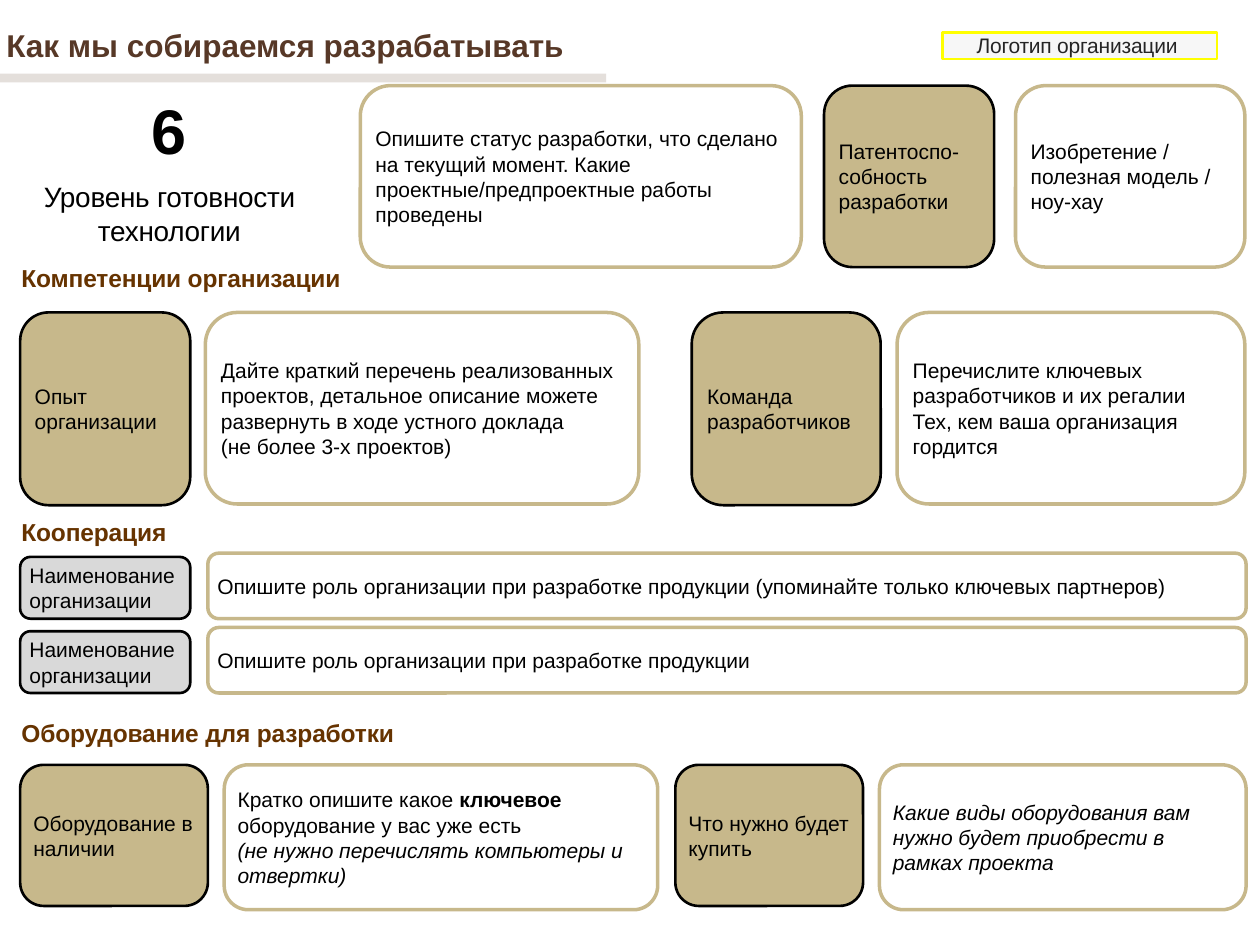
"""Build the slide on how the technology will be developed."""
from lxml.etree import SubElement
from pptx import Presentation
from pptx.dml.color import RGBColor
from pptx.enum.shapes import MSO_CONNECTOR, MSO_SHAPE
from pptx.enum.text import MSO_ANCHOR, PP_ALIGN
from pptx.oxml.ns import qn
from pptx.util import Inches, Pt

BLACK = RGBColor(0x00, 0x00, 0x00)
WHITE = RGBColor(0xFF, 0xFF, 0xFF)
SAND = RGBColor(0xC7, 0xB8, 0x8B)
GREY = RGBColor(0xD9, 0xD9, 0xD9)
PALE = RGBColor(0xF1, 0xF1, 0xF1)
YELLOW = RGBColor(0xFF, 0xFF, 0x00)
BROWN = RGBColor(0x66, 0x33, 0x00)
COCOA = RGBColor(0x57, 0x38, 0x27)
STONE = RGBColor(0xA8, 0x99, 0x8C)
INK = RGBColor(0x25, 0x25, 0x25)

deck = Presentation()
deck.slide_width, deck.slide_height = Inches(10), Inches(7.5)
slide = deck.slides.add_slide(deck.slide_layouts[6])
COL, ROW = deck.slide_width / 100, deck.slide_height / 75


def place(left, top, width, height, form=None):
    area = int(left * COL), int(top * ROW), int(width * COL), int(height * ROW)
    if form is None:
        return slide.shapes.add_textbox(*area)
    shape = slide.shapes.add_shape(form, *area)
    shape.shadow.inherit = False
    return shape


def write(shape, paras, size=12, color=BLACK, inset=0.05, before=0, space=0):
    frame = shape.text_frame
    frame.word_wrap = True
    frame.margin_left = frame.margin_right = Inches(inset)
    frame.margin_top = frame.margin_bottom = Inches(inset)
    for count, runs in enumerate(paras):
        para = frame.add_paragraph() if count else frame.paragraphs[0]
        para.alignment = PP_ALIGN.LEFT
        para.space_before = Pt(before)
        for text, style in runs:
            if text == "\n":
                para.add_line_break()
                continue
            run = para.add_run()
            run.text = text
            font = run.font
            font.name, font.size = "Arial", Pt(size)
            font.bold, font.italic = "b" in style, "i" in style
            font.color.rgb = color
            if space:
                run._r.get_or_add_rPr().set("spc", str(space))
    return frame


heads = [
    (20.9, "Компетенции организации"),
    (41, "Кооперация"),
    (57, "Оборудование для разработки"),
]
for top, text in heads:
    head = place(1.7, top, 66.9, 2.4)
    write(head, [[(text, "b")]], 14, BROWN, 0, 1, -10)

level = place(0, 7.3, 26.9, 12.4)
frame = write(level, [[("6", "b")], [("Уровень готовности ", ""), ("технологии", "")]],
              16, inset=0, before=7, space=-15)
for para in frame.paragraphs:
    para.alignment = PP_ALIGN.CENTER
grade = frame.paragraphs[0]
grade.space_before = Pt(10)
grade.runs[0].font.size = Pt(36)

logo = place(74.8, 2.6, 21.8, 2.1, MSO_SHAPE.RECTANGLE)
logo.fill.solid()
logo.fill.fore_color.rgb = PALE
logo.line.color.rgb, logo.line.width = YELLOW, Pt(1.56)
frame = write(logo, [[("Логотип организации", "")]], 12, INK, 0, 2, -10)
frame.vertical_anchor = MSO_ANCHOR.TOP
frame.margin_left = Inches(0.27)

title = place(0, 1.6, 45.8, 4)
frame = write(title, [[("Как мы собираемся разрабатывать", "b")]], 18, COCOA)
frame.word_wrap = False

rule = slide.shapes.add_connector(
    MSO_CONNECTOR.STRAIGHT, 0, int(6.2 * ROW), int(48.1 * COL), int(6.2 * ROW))
rule.line.color.rgb, rule.line.width = STONE, Pt(5)
SubElement(rule._element.spPr, qn("a:effectLst"))
for shape, alpha in ((logo, 52), (rule, 31)):
    tint = next(shape._element.spPr.iter(qn("a:srgbClr")))
    SubElement(tint, qn("a:alpha")).set("val", str(alpha * 1000))

bands = [
    (6.8, 14.4, 14.4, [
        (28.6, 35, WHITE, [[("Опишите статус разработки, что сделано на текущий момент. "
                             "Какие проектные/предпроектные работы проведены", "")]]),
        (65.4, 13.5, SAND, [[("Патентоспо-собность разработки", "")]]),
        (80.6, 18.2, WHITE, [[("Изобретение / полезная модель / ноу-хау", "")]]),
    ]),
    (24.8, 15.3, 15.2, [
        (1.6, 13.5, SAND, [[("Опыт организации", "")]]),
        (16.3, 34.4, WHITE, [
            [("Дайте краткий перечень реализованных проектов, детальное описание "
              "можете развернуть в ходе устного доклада", "")],
            [("(не более 3-х проектов)", "")]]),
        (54.9, 15, SAND, [[("Команда разработчиков", "")]]),
        (71.2, 27.6, WHITE, [[("Перечислите ключевых разработчиков и их регалии", ""),
                              ("\n", ""),
                              ("Тех, кем ваша организация гордится", "")]]),
    ]),
    (60.7, 11.2, 11.5, [
        (1.6, 14.9, SAND, [[("Оборудование в наличии", "")]]),
        (17.8, 34.4, WHITE, [
            [("Кратко опишите какое ", ""), ("ключевое ", "b"),
             ("оборудование у вас уже есть", "")],
            [("(не нужно перечислять компьютеры и отвертки)", "i")]]),
        (53.6, 14.9, SAND, [[("Что нужно будет купить", "")]]),
        (69.8, 29.1, WHITE, [[("Какие виды оборудования вам нужно будет приобрести "
                               "в рамках проекта", "i")]]),
    ]),
]
cards = [
    (left, top, width, full if fill == WHITE else label, fill, paras)
    for top, label, full, row in bands
    for left, width, fill, paras in row
]
role = "Опишите роль организации при разработке продукции"
for step, more in enumerate((" (упоминайте только ключевых партнеров)", "")):
    top = 43.9 + 5.9 * step
    cards.append((1.6, top + 0.3, 13.5, 4.9, GREY, [[("Наименование организации", "")]]))
    cards.append((16.5, top, 82.4, 5.2, WHITE, [[(role + more, "")]]))

for left, top, width, height, fill, paras in cards:
    card = place(left, top, width, height, MSO_SHAPE.ROUNDED_RECTANGLE)
    card.fill.solid()
    card.fill.fore_color.rgb = fill
    card.line.color.rgb = SAND if fill == WHITE else BLACK
    card.line.width = Pt(2 if fill == WHITE else 1.5)
    write(card, paras).vertical_anchor = MSO_ANCHOR.MIDDLE

deck.save("out.pptx")
